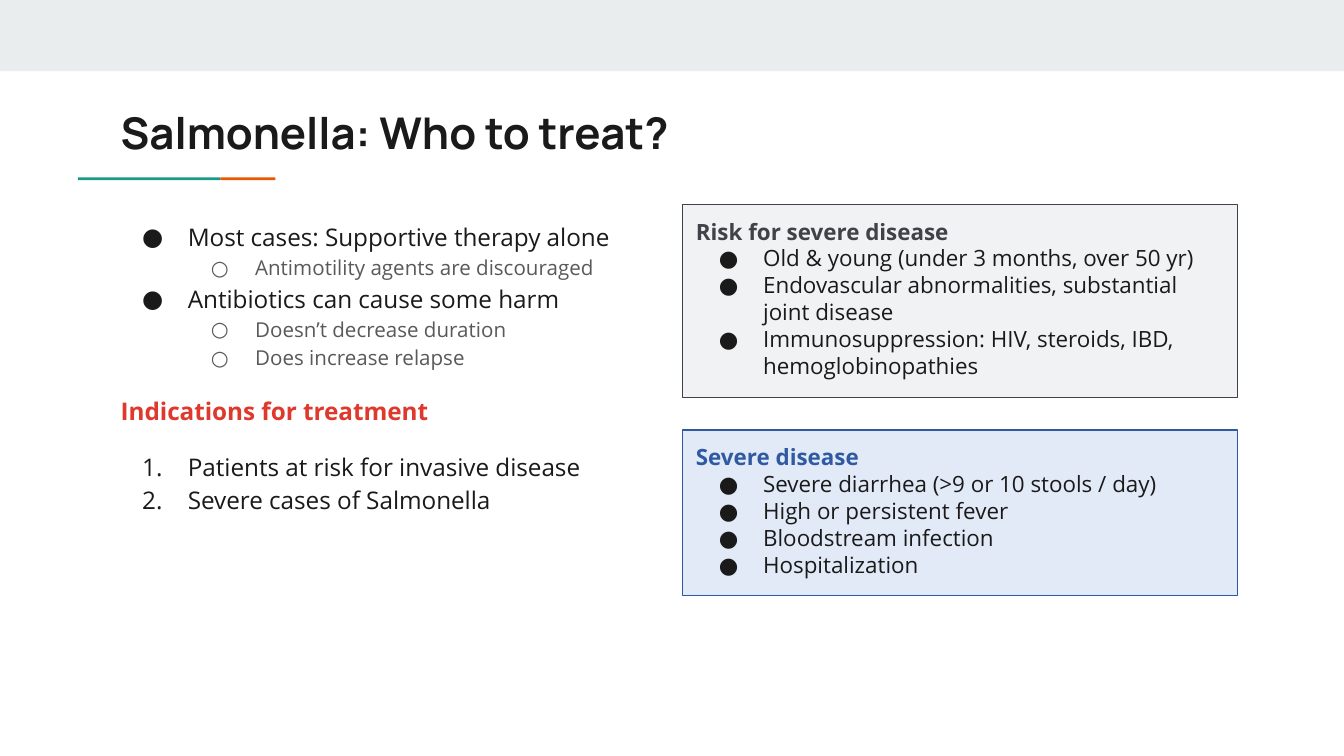
from lxml import etree
from pptx import Presentation
from pptx.dml.color import RGBColor
from pptx.enum.shapes import MSO_SHAPE
from pptx.enum.text import MSO_ANCHOR, PP_ALIGN
from pptx.oxml.ns import qn
from pptx.util import Inches, Pt

RECTANGLE = MSO_SHAPE.RECTANGLE
TOP = MSO_ANCHOR.TOP
LEFT = PP_ALIGN.LEFT

COLORS = {
    "band": "E9EDEE", "teal": "1A9988", "orange": "EB5600",
    "ink": "1A1A1A", "muted": "595959", "red": "DF382C",
    "gray": "404247", "gray_fill": "F1F2F3",
    "blue": "2F5AA2", "blue_fill": "E2EAF7",
}


def add_rectangle(left, top, width, height, fill, line=None):
    shape = slide.shapes.add_shape(
        RECTANGLE, Inches(left), Inches(top), Inches(width), Inches(height))
    shape.shadow.inherit = False
    shape.fill.solid()
    shape.fill.fore_color.rgb = RGBColor.from_string(COLORS[fill])
    if line:
        shape.line.color.rgb = RGBColor.from_string(COLORS[line])
        shape.line.width = Pt(0.75)
    else:
        shape.line.fill.background()
    return shape


def write_paragraphs(shape, items, spacing=1.0, font="Open Sans"):
    frame = shape.text_frame
    frame.word_wrap = True
    frame.vertical_anchor = TOP
    frame.margin_left = frame.margin_right = Inches(0.1)
    frame.margin_top = frame.margin_bottom = Inches(0.1)
    for index, (text, size, color, bold, bullet, level, before) in enumerate(items):
        paragraph = frame.paragraphs[0] if index == 0 else frame.add_paragraph()
        paragraph.text = text
        paragraph.alignment = LEFT
        paragraph.level = level
        paragraph.line_spacing = spacing
        paragraph.space_before = Pt(before)
        if bullet:
            properties = paragraph._p.get_or_add_pPr()
            properties.set("marL", str(Inches(0.5 * (level + 1))))
            hanging = 0.34 if size == 13 else 0.33
            properties.set("indent", str(-Inches(hanging)))
            bullet_color = etree.SubElement(properties, qn("a:buClr"))
            etree.SubElement(bullet_color, qn("a:srgbClr"), val=COLORS[color])
            etree.SubElement(properties, qn("a:buFont"), typeface=font)
            if bullet == "1.":
                etree.SubElement(properties, qn("a:buAutoNum"), type="arabicPeriod")
            else:
                etree.SubElement(properties, qn("a:buChar"), char=bullet)
        paragraph.font.name = font
        paragraph.font.size = Pt(size)
        paragraph.font.bold = bold
        paragraph.font.color.rgb = RGBColor.from_string(COLORS[color])


presentation = Presentation()
presentation.slide_width = Inches(10)
presentation.slide_height = Inches(10) * 9 // 16
slide = presentation.slides.add_slide(presentation.slide_layouts[6])

add_rectangle(0, 0, 10, 0.53, "band")
add_rectangle(0.58, 1.32, 1.06, 0.02, "teal")
add_rectangle(1.64, 1.32, 0.41, 0.02, "orange")

title = slide.shapes.add_textbox(Inches(0.8), Inches(0.69), Inches(8.41), Inches(0.59))
write_paragraphs(
    title, [("Salmonella: Who to treat?", 23.4, "ink", True, None, 0, 0)], font="Manrope")

body = slide.shapes.add_textbox(Inches(0.8), Inches(1.52), Inches(4.13), Inches(2.47))
write_paragraphs(body, [
    ("Most cases: Supportive therapy alone", 13, "ink", False, "●", 0, 0),
    ("Antimotility agents are discouraged", 11, "muted", False, "○", 1, 0),
    ("Antibiotics can cause some harm", 13, "ink", False, "●", 0, 0),
    ("Doesn’t decrease duration", 11, "muted", False, "○", 1, 0),
    ("Does increase relapse", 11, "muted", False, "○", 1, 0),
    ("Indications for treatment", 13, "red", True, None, 0, 12),
    ("Patients at risk for invasive disease", 13, "ink", False, "1.", 0, 12),
    ("Severe cases of Salmonella", 13, "ink", False, "1.", 0, 0),
], spacing=1.15)

panels = [
    (1.52, 1.44, "gray", "Risk for severe disease", [
        "Old & young (under 3 months, over 50 yr)",
        "Endovascular abnormalities, substantial joint disease",
        "Immunosuppression: HIV, steroids, IBD, hemoglobinopathies",
    ]),
    (3.2, 1.23, "blue", "Severe disease", [
        "Severe diarrhea (>9 or 10 stools / day)",
        "High or persistent fever",
        "Bloodstream infection",
        "Hospitalization",
    ]),
]
for top, height, color, heading, points in panels:
    panel = add_rectangle(5.08, top, 4.13, height, color + "_fill", color)
    write_paragraphs(panel, [(heading, 12, color, True, None, 0, 0)] + [
        (point, 12, "ink", False, "●", 0, 0) for point in points])

presentation.save("out.pptx")
